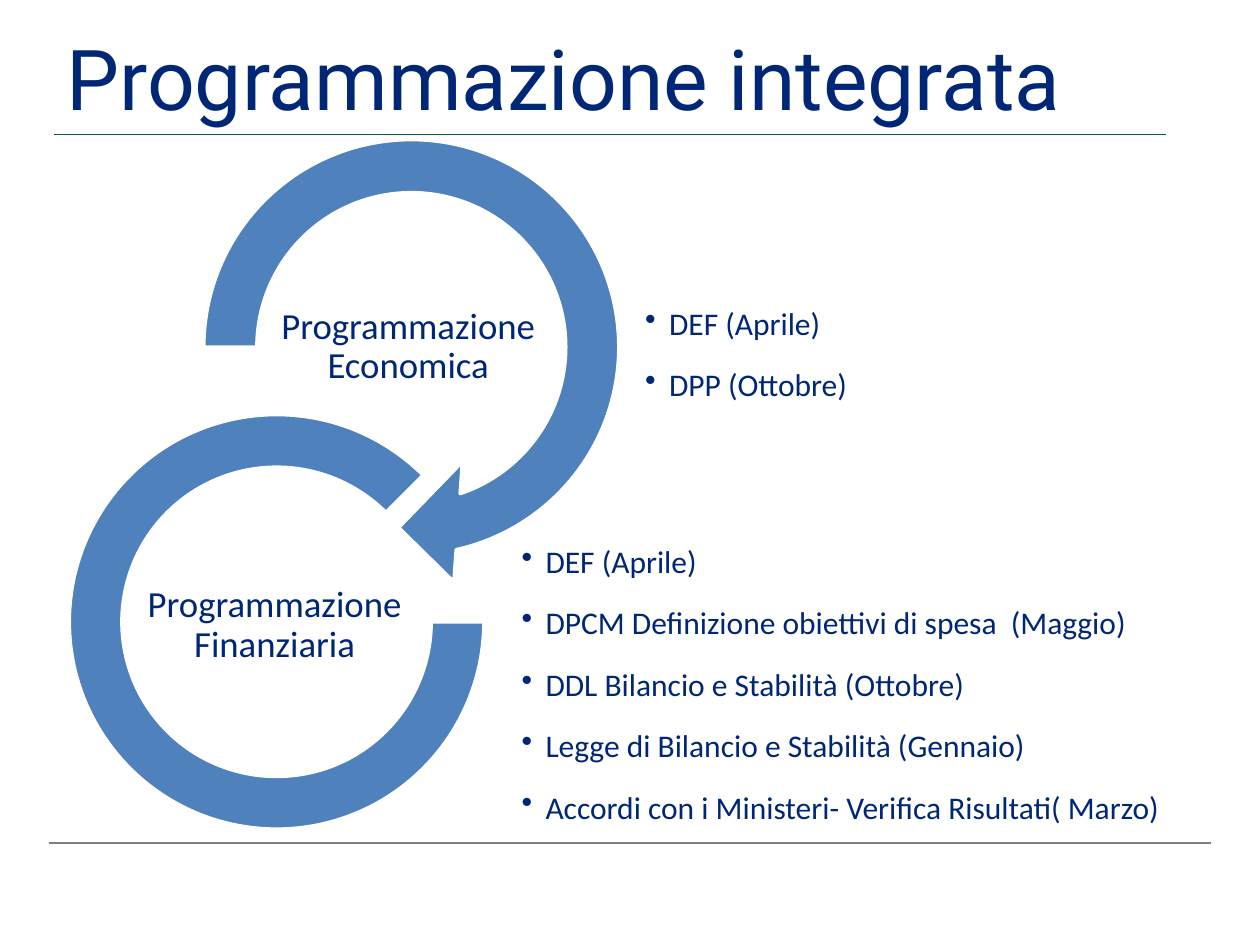
from lxml.etree import SubElement
from pptx import Presentation
from pptx.dml.color import RGBColor
from pptx.enum.shapes import MSO_CONNECTOR, MSO_SHAPE
from pptx.enum.text import MSO_ANCHOR, PP_ALIGN
from pptx.oxml.ns import qn
from pptx.util import Inches, Pt

COLORS = {"text": "002776", "ring": "4F81BD", "outline": "FFFFFF",
          "title_rule": "006442", "footer_rule": "808080"}

TITLE = "Programmazione integrata"

# Lines: left, right, height on the slide, colour
RULES = [(0.39, 9.61, 6.69, "footer_rule"), (0.43, 9.25, 1.07, "title_rule")]

# Boxes are left, top, width, height in inches
CYCLES = [
    {
        "ring": (MSO_SHAPE.CIRCULAR_ARROW, (1.35, 0.84, 3.83, 3.83),
                 (0.11, 11.42, 45, 108, 0.125)),
        "label": ("Programmazione Economica", (2.17, 2.22, 2.14, 1.07)),
        "bullet_box": (5.11, 1.97, 3.02, 1.52),
        "bullets": ["DEF (Aprile)", "DPP (Ottobre)"],
    },
    {
        "ring": (MSO_SHAPE.BLOCK_ARC, (0.55, 3.29, 3.29, 3.29), (0, 189, 0.127)),
        "label": ("Programmazione Finanziaria", (1.11, 4.43, 2.14, 1.07)),
        "bullet_box": (4.13, 4.59, 5.57, 1.52),
        "bullets": [
            "DEF (Aprile)",
            "DPCM Definizione obiettivi di spesa  (Maggio)",
            "DDL Bilancio e Stabilità (Ottobre)",
            "Legge di Bilancio e Stabilità (Gennaio)",
            "Accordi con i Ministeri- Verifica Risultati( Marzo)",
        ],
    },
]


def color(name):
    return RGBColor.from_string(COLORS[name])


def inches(box):
    return [Inches(value) for value in box]


def add_rule(slide, left, right, y, color_name):
    rule = slide.shapes.add_connector(
        MSO_CONNECTOR.STRAIGHT, *inches((left, y, right, y)))
    rule.line.color.rgb = color(color_name)
    rule.line.width = Pt(0.75)
    SubElement(rule._element.spPr, qn("a:effectLst"))


def add_ring(slide, kind, box, adjustments):
    ring = slide.shapes.add_shape(kind, *inches(box))
    for index, value in enumerate(adjustments):
        ring.adjustments[index] = value
    ring.shadow.inherit = False
    ring.fill.solid()
    ring.fill.fore_color.rgb = color("ring")
    ring.line.color.rgb = color("outline")
    ring.line.width = Pt(2)


def add_bullet(paragraph):
    properties = paragraph._p.get_or_add_pPr()
    properties.set("marL", str(Inches(0.19)))
    properties.set("indent", str(-Inches(0.19)))
    SubElement(properties, qn("a:buChar")).set("char", "•")


def add_text(slide, box, lines, size, font="Calibri", spacing=1.0, after=0,
             align=PP_ALIGN.LEFT, bulleted=False, centred=True):
    """Add a text box; centred boxes have thin margins and a middle anchor."""
    frame = slide.shapes.add_textbox(*inches(box)).text_frame
    frame.word_wrap = True
    if centred:
        frame.vertical_anchor = MSO_ANCHOR.MIDDLE
        frame.margin_left = frame.margin_right = Inches(0.01)
        frame.margin_top = frame.margin_bottom = Inches(0.01)
    for index, line in enumerate(lines):
        paragraph = frame.add_paragraph() if index else frame.paragraphs[0]
        paragraph.text = line
        if bulleted:
            paragraph.level = 1
            add_bullet(paragraph)
        paragraph.alignment = align
        paragraph.line_spacing = spacing
        paragraph.space_after = Pt(after)
        paragraph.font.name = font
        paragraph.font.size = Pt(size)
        paragraph.font.color.rgb = color("text")


def main():
    presentation = Presentation()
    presentation.slide_width = Inches(10)
    presentation.slide_height = Inches(7.5)
    slide = presentation.slides.add_slide(presentation.slide_layouts[6])

    for rule in RULES:
        add_rule(slide, *rule)
    add_text(slide, (0.43, 0.16, 8.9, 0.91), [TITLE], 48, "Roboto", centred=False)
    for cycle in CYCLES:
        add_ring(slide, *cycle["ring"])
        add_text(slide, cycle["bullet_box"], cycle["bullets"], 18,
                 spacing=1.5, after=2.7, bulleted=True)
        label, box = cycle["label"]
        add_text(slide, box, [label], 21, spacing=0.9, after=7.35,
                 align=PP_ALIGN.CENTER)
    presentation.save("out.pptx")


if __name__ == "__main__":
    main()
